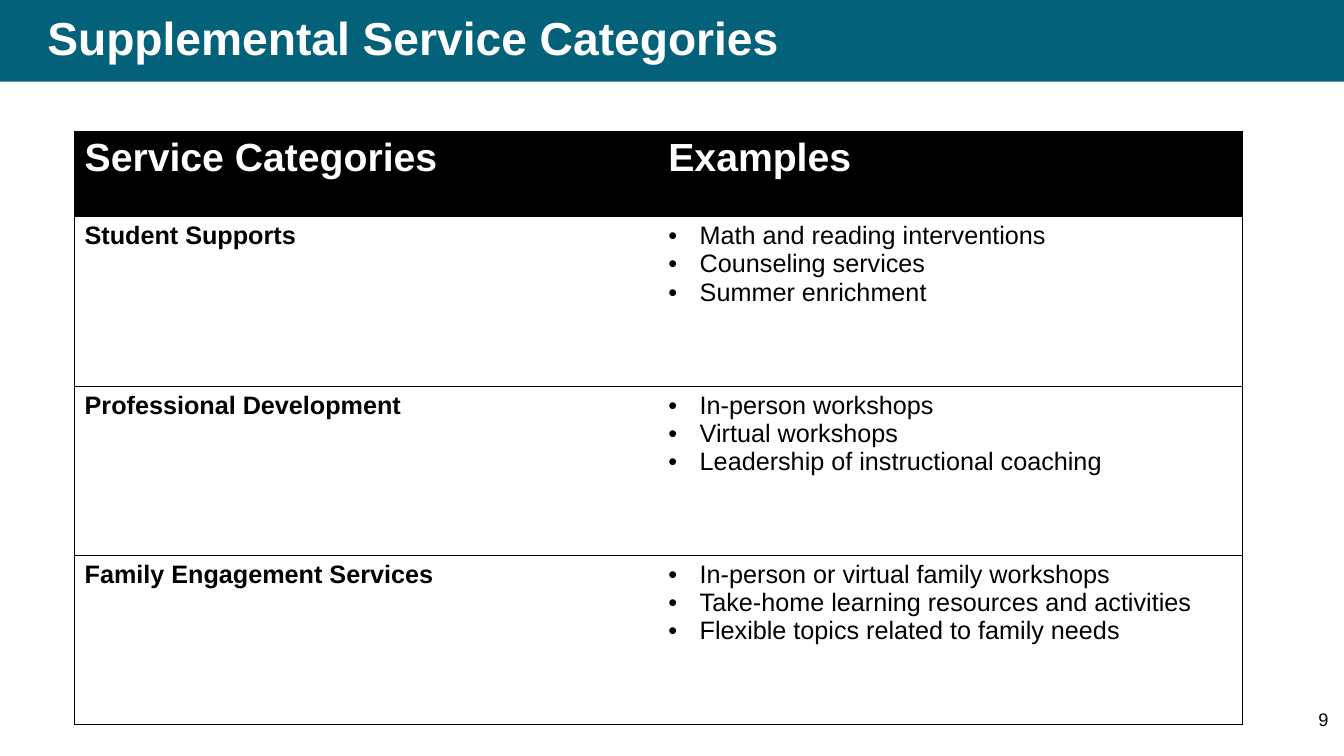
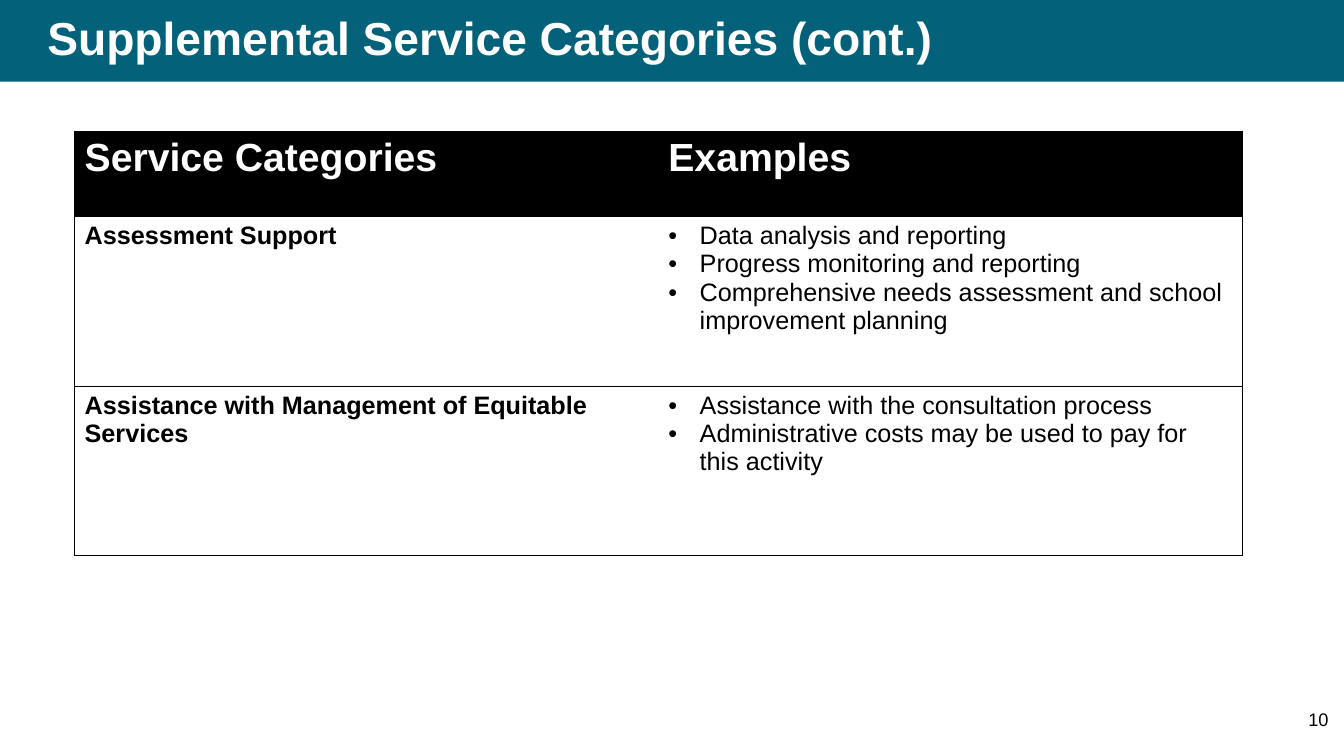
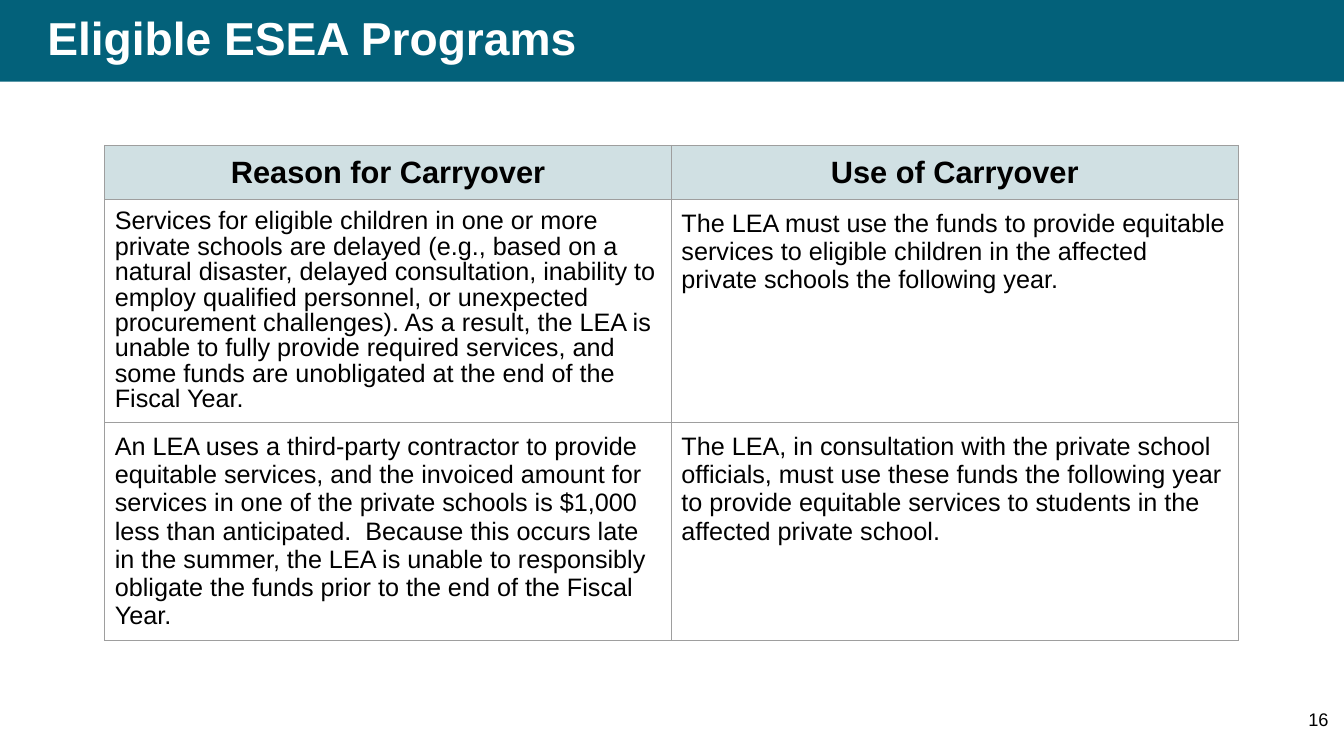
from lxml.etree import SubElement
from pptx import Presentation
from pptx.dml.color import RGBColor
from pptx.enum.shapes import MSO_SHAPE
from pptx.enum.text import MSO_ANCHOR, MSO_AUTO_SIZE, PP_ALIGN
from pptx.oxml.ns import qn
from pptx.util import Cm, Pt

TEAL = RGBColor(0x03, 0x61, 0x7A)
PALE_TEAL = RGBColor(0xD0, 0xE0, 0xE3)
GRAY = RGBColor(0x9E, 0x9E, 0x9E)
BLACK = RGBColor(0, 0, 0)
WHITE = RGBColor(255, 255, 255)
FONT = "Arial"
PLAIN_TABLE = "{2D5ABB26-0587-4C30-8999-92F81FD0307C}"
SLIDE_W, SLIDE_H, BAND_H = Cm(33.87), Cm(19.05), Cm(2.06)

# Content: a list in a cell becomes bullets
SERVICE_HEADER = ("Service Categories", "Examples")
SERVICES = [
    ("Student Supports", [
        "Math and reading interventions",
        "Counseling services",
        "Summer enrichment"]),
    ("Professional Development", [
        "In-person workshops",
        "Virtual workshops",
        "Leadership of instructional coaching"]),
    ("Family Engagement Services", [
        "In-person or virtual family workshops",
        "Take-home learning resources and activities",
        "Flexible topics related to family needs"]),
]
MORE_SERVICES = [
    ("Assessment Support", [
        "Data analysis and reporting",
        "Progress monitoring and reporting",
        "Comprehensive needs assessment and school improvement planning"]),
    ("Assistance with Management of Equitable Services", [
        "Assistance with the consultation process",
        "Administrative costs may be used to pay for this activity"]),
]
CARRYOVER_HEADER = ("Reason for Carryover", "Use of Carryover")
CARRYOVER = [
    ("Services for eligible children in one or more private schools are "
     "delayed (e.g., based on a natural disaster, delayed consultation, "
     "inability to employ qualified personnel, or unexpected procurement "
     "challenges). As a result, the LEA is unable to fully provide required "
     "services, and some funds are unobligated at the end of the Fiscal Year.",
     "The LEA must use the funds to provide equitable services to eligible "
     "children in the affected private schools the following year."),
    ("An LEA uses a third-party contractor to provide equitable services, and "
     "the invoiced amount for services in one of the private schools is $1,000 "
     "less than anticipated.  Because this occurs late in the summer, the LEA "
     "is unable to responsibly obligate the funds prior to the end of the "
     "Fiscal Year.",
     "The LEA, in consultation with the private school officials, must use "
     "these funds the following year to provide equitable services to students "
     "in the affected private school."),
]

# Table looks
SERVICE_LOOK = dict(
    left=Cm(1.88), top=Cm(3.3), column=Cm(14.71), header_h=Cm(2.16),
    row_heights=[Cm(4.27)] * 3, margin_y=Cm(0.13), line=BLACK,
    inner_verticals=False, header_fill=BLACK, header_color=WHITE,
    header_size=28, header_align=PP_ALIGN.LEFT, bold_labels=True)
CARRYOVER_LOOK = dict(
    left=Cm(2.64), top=Cm(3.66), column=Cm(14.28), header_h=Cm(1.36),
    row_heights=[Cm(5.62), Cm(5.49)], margin_y=Cm(0.25), line=GRAY,
    inner_verticals=True, header_fill=PALE_TEAL, header_color=BLACK,
    header_size=22, header_align=PP_ALIGN.CENTER, bold_labels=False)

SLIDES = [
    ("Supplemental Service Categories", 9,
     SERVICE_HEADER, SERVICES, SERVICE_LOOK),
    ("Supplemental Service Categories (cont.)", 10,
     SERVICE_HEADER, MORE_SERVICES, SERVICE_LOOK),
    ("Eligible ESEA Programs", 16,
     CARRYOVER_HEADER, CARRYOVER, CARRYOVER_LOOK),
]


def style(paragraph, size, color=BLACK, bold=False, align=PP_ALIGN.LEFT):
    paragraph.alignment = align
    font = paragraph.font
    font.name, font.size, font.bold = FONT, Pt(size), bold
    font.color.rgb = color


def add_bullet(paragraph):
    props = paragraph._p.get_or_add_pPr()
    props.set("marL", str(Cm(0.79)))
    props.set("indent", str(-Cm(0.79)))
    bullet_color = SubElement(props, qn("a:buClr"))
    SubElement(bullet_color, qn("a:srgbClr"), val=str(BLACK))
    SubElement(props, qn("a:buFont"), typeface=FONT)
    SubElement(props, qn("a:buChar"), char="•")


def set_borders(cell, sides, color):
    props = cell._tc.get_or_add_tcPr()
    for side in sides:
        line = SubElement(props, qn(f"a:ln{side}"), w=str(Pt(0.75)))
        fill = SubElement(line, qn("a:solidFill"))
        SubElement(fill, qn("a:srgbClr"), val=str(color))


def fill_cell(cell, content, look, is_header, is_label):
    # Borders go in ahead of the fill
    sides = "LRTB" if look["inner_verticals"] else ("LTB" if is_label else "RTB")
    set_borders(cell, sides, look["line"])
    cell.margin_top = cell.margin_bottom = look["margin_y"]
    if is_header:
        cell.fill.solid()
        cell.fill.fore_color.rgb = look["header_fill"]
    else:
        cell.fill.background()

    bulleted = isinstance(content, list)
    cell.text_frame.text = "\n".join(content) if bulleted else content
    for paragraph in cell.text_frame.paragraphs:
        if bulleted:
            add_bullet(paragraph)
        if is_header:
            style(paragraph, look["header_size"], look["header_color"], True,
                  look["header_align"])
        else:
            style(paragraph, 18, bold=is_label and look["bold_labels"])


def add_grid(slide, header, rows, look):
    heights = [look["header_h"]] + look["row_heights"][:len(rows)]
    table = slide.shapes.add_table(
        len(heights), len(header), look["left"], look["top"],
        look["column"] * len(header), sum(heights)).table
    table.horz_banding = False
    table._tbl.tblPr.find(qn("a:tableStyleId")).text = PLAIN_TABLE
    for r, (height, contents) in enumerate(zip(heights, [header] + rows)):
        table.rows[r].height = height
        for c, content in enumerate(contents):
            fill_cell(table.cell(r, c), content, look, r == 0, c == 0)
    return table


def prepare_layout(layout, slide):
    """Move a band into the layout, behind its title, and place the title."""
    band = slide.shapes.add_shape(MSO_SHAPE.RECTANGLE, 0, 0, SLIDE_W, BAND_H)
    band.shadow.inherit = False
    band.fill.solid()
    band.fill.fore_color.rgb = TEAL
    band.line.fill.background()
    layout.shapes.element.insert(2, band.element)
    title = layout.placeholders[0]
    title.left, title.top, title.width, title.height = (
        Cm(0.94), 0, Cm(31.29), BAND_H)
    title.text_frame.vertical_anchor = MSO_ANCHOR.MIDDLE
    title.text_frame.auto_size = MSO_AUTO_SIZE.NONE


def add_title(slide, text):
    slide.shapes.title.text = text
    heading = slide.shapes.title.text_frame.paragraphs[0]
    heading.line_spacing = 0.9
    style(heading, 33, WHITE, True)


def add_page_number(slide, number):
    frame = slide.shapes.add_textbox(
        Cm(31.7), Cm(17.6), Cm(2.03), Cm(1.45)).text_frame
    frame.word_wrap = True
    frame.margin_top = frame.margin_bottom = Cm(0.25)
    frame.text = str(number)
    style(frame.paragraphs[0], 13, align=PP_ALIGN.RIGHT)


def main():
    deck = Presentation()
    deck.slide_width, deck.slide_height = SLIDE_W, SLIDE_H
    layout = deck.slide_layouts.get_by_name("Title Only")
    for index, (title, number, header, rows, look) in enumerate(SLIDES):
        slide = deck.slides.add_slide(layout)
        if index == 0:
            prepare_layout(layout, slide)
        add_title(slide, title)
        table = add_grid(slide, header, rows, look)
        if look is CARRYOVER_LOOK:
            # The longest reason is set tighter
            table.cell(1, 0).text_frame.paragraphs[0].line_spacing = 0.9
        add_page_number(slide, number)
    deck.save("out.pptx")


if __name__ == "__main__":
    main()
